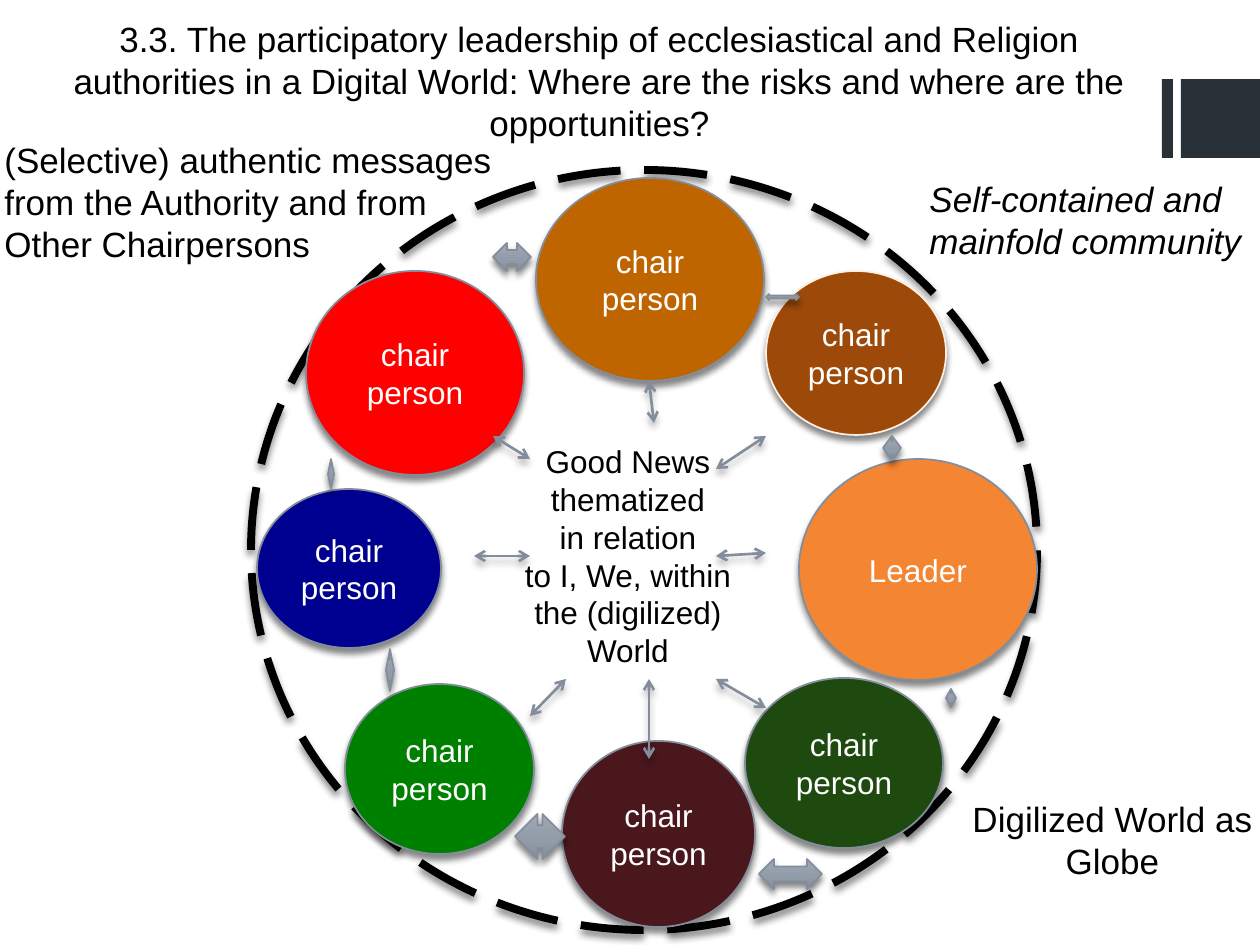
from copy import deepcopy

from lxml.etree import SubElement
from pptx import Presentation
from pptx.dml.color import RGBColor
from pptx.enum.dml import MSO_LINE
from pptx.enum.shapes import MSO_CONNECTOR, MSO_SHAPE
from pptx.enum.text import MSO_ANCHOR, MSO_AUTO_SIZE, PP_ALIGN
from pptx.oxml.ns import qn
from pptx.util import Emu, Pt

BLACK = RGBColor(0x00, 0x00, 0x00)
WHITE = RGBColor(0xFF, 0xFF, 0xFF)
SLATE = RGBColor(0x28, 0x31, 0x38)
GREY = RGBColor(0x83, 0x8D, 0x9B)
GREY_MIDDLE = RGBColor(0x92, 0x9B, 0xA8)
GREY_LIGHT = RGBColor(0x9F, 0xA9, 0xB6)
CREAM = RGBColor(0xFD, 0xEF, 0xE4)
OCHRE = RGBColor(0xBF, 0x65, 0x00)
BROWN = RGBColor(0x9D, 0x49, 0x09)
ORANGE = RGBColor(0xF3, 0x85, 0x33)
RED = RGBColor(0xFF, 0x00, 0x00)
FOREST = RGBColor(0x1E, 0x4A, 0x10)
MAROON = RGBColor(0x4A, 0x17, 0x1D)
NAVY = RGBColor(0x00, 0x00, 0x90)
GREEN = RGBColor(0x00, 0x80, 0x00)

PX_PER_INCH = 126
FONT = "Arial"
CHAIR = "chair person"

TITLE = (
    "3.3. The participatory leadership of ecclesiastical and Religion "
    "authorities in a Digital World: Where are the risks and where are the "
    "opportunities?"
)
BARS = [(1162, 79, 11, 79), (1181, 79, 79, 79)]
MEMBERS = [
    (CHAIR, (536, 178, 228, 203), OCHRE, GREY),
    (CHAIR, (766, 271, 180, 164), BROWN, CREAM),
    ("Leader", (799, 459, 238, 221), ORANGE, GREY),
    (CHAIR, (306, 271, 218, 204), RED, GREY),
    (CHAIR, (745, 678, 198, 170), FOREST, GREY),
    (CHAIR, (562, 741, 193, 186), MAROON, GREY),
    (CHAIR, (257, 489, 184, 159), NAVY, GREY),
    (CHAIR, (345, 684, 189, 170), GREEN, GREY),
]
EXCHANGES = [
    (766, 294, 33, 6),
    (883, 436, 18, 24),
    (946, 689, 10, 18),
    (515, 814, 50, 45),
    (759, 859, 63, 30),
    (386, 649, 8, 42),
    (328, 459, 6, 30),
    (493, 243, 38, 28),
]
SPOKES = [
    (716, 556, 766, 553),
    (716, 469, 766, 436),
    (649, 381, 654, 423),
    (493, 436, 530, 459),
    (474, 556, 530, 556),
    (530, 716, 566, 679),
    (649, 679, 649, 759),
    (716, 679, 766, 708),
]


def px(*lengths):
    return [Emu(round(length * 914400 / PX_PER_INCH)) for length in lengths]


class Board:
    """Draws the styled elements of the community diagram on one slide."""

    def __init__(self, slide):
        self.slide = slide
        self.shapes = slide.shapes

    def set_text(self, frame, lines, size, color, align, italic=None):
        frame.text = "\n".join(lines)
        for paragraph in frame.paragraphs:
            paragraph.alignment = align
            font = paragraph.font
            font.name, font.size, font.italic = FONT, Pt(size), italic
            font.color.rgb = color

    def cast_shadow(self, effects, opacity, blur):
        shadow = SubElement(
            effects, qn("a:outerShdw"), blurRad=str(Pt(blur)), dist=str(Pt(3)),
            dir="5400000", rotWithShape="0")
        color = SubElement(shadow, qn("a:srgbClr"), val=str(BLACK))
        SubElement(color, qn("a:alpha"), val=str(opacity * 1000))

    def shape(self, kind, box, fill=None, line=None, width=1):
        shape = self.shapes.add_shape(kind, *px(*box))
        shape.shadow.inherit = False
        if fill is None:
            shape.fill.background()
        else:
            shape.fill.solid()
            shape.fill.fore_color.rgb = fill
        if line is None:
            shape.line.fill.background()
        else:
            shape.line.color.rgb = line
            shape.line.width = Pt(width)
            effects = shape._element.spPr.find(qn("a:effectLst"))
            self.cast_shadow(effects, 48, 3.8)
        return shape

    def title(self, text, box):
        title = self.shapes.title
        title.left, title.top, title.width, title.height = px(*box)
        frame = title.text_frame
        frame.auto_size = MSO_AUTO_SIZE.NONE
        frame.vertical_anchor = MSO_ANCHOR.TOP
        self.set_text(frame, [text], 20, BLACK, PP_ALIGN.CENTER)

    def ring(self, box):
        ring = self.shape(MSO_SHAPE.FLOWCHART_CONNECTOR, box, None, BLACK, 4.5)
        ring.line.dash_style = MSO_LINE.LONG_DASH

    def member(self, label, box, fill, line):
        frame = self.shape(MSO_SHAPE.OVAL, box, fill, line).text_frame
        frame.word_wrap = True
        frame.vertical_anchor = MSO_ANCHOR.MIDDLE
        self.set_text(frame, [label], 18, WHITE, PP_ALIGN.CENTER)

    def text(self, lines, box, size=20, align=PP_ALIGN.LEFT, italic=None, wrap=False):
        frame = self.shapes.add_textbox(*px(*box)).text_frame
        frame.word_wrap = wrap
        frame.auto_size = MSO_AUTO_SIZE.SHAPE_TO_FIT_TEXT
        self.set_text(frame, lines, size, BLACK, align, italic)

    def exchange(self, box):
        arrow = self.shape(MSO_SHAPE.LEFT_RIGHT_ARROW, box, GREY, GREY)
        arrow.fill.gradient()
        arrow.fill.gradient_angle = 270
        stop_list = next(arrow._element.spPr.iter(qn("a:gsLst")))
        stop_list.append(deepcopy(stop_list[-1]))
        stops = zip(arrow.fill.gradient_stops, (0, 0.6, 1), (GREY_LIGHT, GREY_MIDDLE, GREY))
        for stop, position, color in stops:
            stop.position = position
            stop.color.rgb = color

    def spoke(self, ends):
        spoke = self.shapes.add_connector(MSO_CONNECTOR.STRAIGHT, *px(*ends))
        spoke.line.color.rgb = GREY
        spoke.line.width = Pt(1.5)
        properties = spoke._element.spPr
        for end in ("a:headEnd", "a:tailEnd"):
            SubElement(properties.find(qn("a:ln")), qn(end), type="arrow")
        self.cast_shadow(SubElement(properties, qn("a:effectLst")), 28, 4)


def main():
    presentation = Presentation()
    presentation.slide_width, presentation.slide_height = px(1260, 945)
    board = Board(presentation.slides.add_slide(presentation.slide_layouts[5]))

    board.title(TITLE, (45, 11, 1109, 140))
    for box in BARS:
        board.shape(MSO_SHAPE.RECTANGLE, box, SLATE)
    board.ring((251, 170, 786, 760))
    for member in MEMBERS:
        board.member(*member)
    board.text(
        ["Good News", "thematized", "in relation", "to I, We, within the (digilized) World"],
        (507, 436, 242, 242), size=18, align=PP_ALIGN.CENTER, wrap=True)
    board.text(["Self-contained and", "mainfold community"], (917, 171, 348, 97), italic=True)
    for box in EXCHANGES:
        board.exchange(box)
    for ends in SPOKES:
        board.spoke(ends)
    board.text(["Digilized World as", "Globe"], (959, 791, 307, 136), align=PP_ALIGN.CENTER)
    board.text(
        ["(Selective) authentic messages", "from the Authority and from", "Other Chairpersons"],
        (-8, 132, 517, 140))
    presentation.save("out.pptx")


if __name__ == "__main__":
    main()
